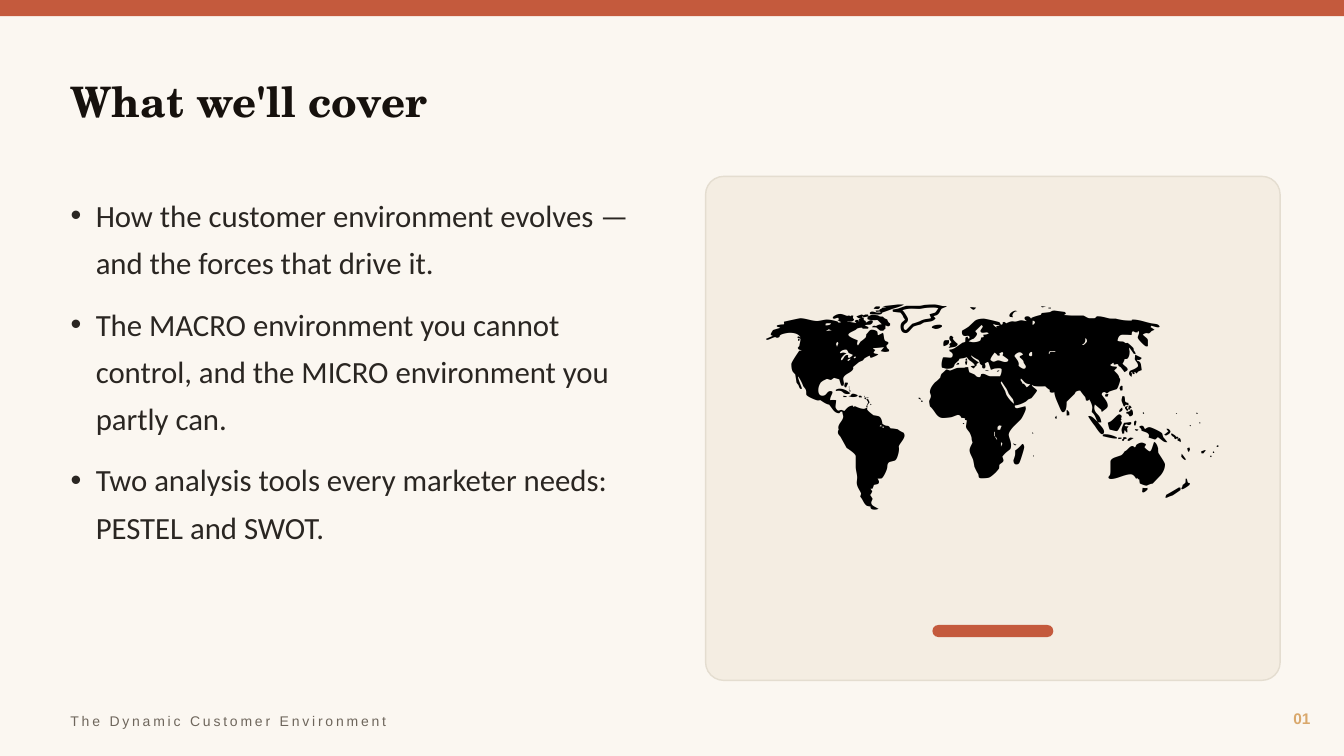
from pptx import Presentation
from pptx.dml.color import RGBColor
from pptx.enum.shapes import MSO_SHAPE
from pptx.enum.text import MSO_ANCHOR, MSO_AUTO_SIZE, PP_ALIGN
from pptx.util import Inches, Pt

RECT, ROUNDED = MSO_SHAPE.RECTANGLE, MSO_SHAPE.ROUNDED_RECTANGLE
TOP, MIDDLE = MSO_ANCHOR.TOP, MSO_ANCHOR.MIDDLE
LEFT, CENTER, RIGHT = PP_ALIGN.LEFT, PP_ALIGN.CENTER, PP_ALIGN.RIGHT
NO_FIT = MSO_AUTO_SIZE.NONE

CREAM = RGBColor(0xFB, 0xF7, 0xF1)
SAND = RGBColor(0xF4, 0xED, 0xE2)
SAND_EDGE = RGBColor(0xE4, 0xDD, 0xD0)
TERRACOTTA = RGBColor(0xC4, 0x5A, 0x3D)
OCHRE = RGBColor(0xD9, 0xA8, 0x6C)
INK = RGBColor(0x16, 0x11, 0x0D)
CHARCOAL = RGBColor(0x2A, 0x26, 0x22)
TAUPE = RGBColor(0x6E, 0x66, 0x5C)
BLACK = RGBColor(0, 0, 0)

HEADING_FONT, BODY_FONT, LABEL_FONT = "TeX Gyre Schola", "Calibri", "Arial"

# The grid has square cells, ten to the inch.
CELL = Inches(0.1)
COLUMNS, ROWS = 133.33, 75
MARGIN = 6
PANEL_LEFT, PANEL_TOP, PANEL_WIDTH, PANEL_HEIGHT = 70, 17.5, 57, 50
ACCENT_WIDTH, ACCENT_HEIGHT = 12, 1.2

TOPICS = [
    "How the customer environment evolves — and the forces that drive it.",
    "The MACRO environment you cannot control, and the MICRO environment you partly can.",
    "Two analysis tools every marketer needs: PESTEL and SWOT.",
]


def cells(*counts):
    """Turn counts of grid cells into lengths."""
    return [round(count * CELL) for count in counts]


def place(placeholder, *area):
    """Move a placeholder to left, top, width and height in cells."""
    (placeholder.left, placeholder.top,
     placeholder.width, placeholder.height) = cells(*area)
    return placeholder


def write(holder, *texts, font, size, color, bold=False, align=LEFT,
          anchor=MIDDLE, spacing=0, bulleted=False):
    """Fill a text holder with one paragraph per text; spacing is in points."""
    frame = holder.text_frame
    frame.word_wrap = True
    frame.auto_size = NO_FIT
    frame.vertical_anchor = anchor
    for index, text in enumerate(texts):
        paragraph = frame.add_paragraph() if index else frame.paragraphs[0]
        paragraph.alignment = align
        paragraph.space_before = Pt(0)
        if bulleted:
            indent = Inches(0.25)
            properties = paragraph._p.get_or_add_pPr()
            properties.set("marL", str(indent))
            properties.set("indent", str(-indent))
            paragraph.line_spacing = 1.28
            paragraph.space_after = Pt(10)
        run = paragraph.add_run()
        run.text = text
        run.font.name = font
        run.font.size = Pt(size)
        run.font.bold = bold
        run.font.color.rgb = color
        if spacing:
            run._r.get_or_add_rPr().set("spc", str(spacing * 100))


def add_label(slide, area, text, **text_format):
    write(slide.shapes.add_textbox(*cells(*area)), text, **text_format)


def add_block(slide, preset, area, fill, edge=None, rounding=None):
    block = slide.shapes.add_shape(preset, *cells(*area))
    block.shadow.inherit = False
    block.fill.solid()
    block.fill.fore_color.rgb = fill
    if edge is None:
        block.line.fill.background()
    else:
        block.line.color.rgb = edge
        block.line.width = Pt(1)
    if rounding is not None:
        block.adjustments[0] = rounding


def add_map_panel(slide):
    add_block(slide, ROUNDED,
              (PANEL_LEFT, PANEL_TOP, PANEL_WIDTH, PANEL_HEIGHT),
              SAND, edge=SAND_EDGE, rounding=0.036)
    add_label(slide, (PANEL_LEFT, PANEL_TOP, PANEL_WIDTH, PANEL_HEIGHT - 9),
              "🗺️", font=BODY_FONT, size=150, color=BLACK, align=CENTER)
    accent_left = PANEL_LEFT + (PANEL_WIDTH - ACCENT_WIDTH) / 2
    add_block(slide, ROUNDED, (accent_left, 62, ACCENT_WIDTH, ACCENT_HEIGHT),
              TERRACOTTA, rounding=0.5)


def main():
    deck = Presentation()
    deck.slide_width, deck.slide_height = cells(COLUMNS, ROWS)
    slide = deck.slides.add_slide(deck.slide_layouts[1])
    slide.background.fill.solid()
    slide.background.fill.fore_color.rgb = CREAM

    add_block(slide, RECT, (0, 0, COLUMNS, 1.6), TERRACOTTA)
    write(place(slide.shapes.title, MARGIN, 5, 121, 10), "What we'll cover",
          font=HEADING_FONT, size=30, color=INK, bold=True)
    write(place(slide.placeholders[1], MARGIN, 18, 60, 50), *TOPICS,
          font=BODY_FONT, size=22, color=CHARCOAL, anchor=TOP, bulleted=True)
    add_map_panel(slide)
    add_label(slide, (122, 69.5, 9, 3.5), "01", font=LABEL_FONT, size=11,
              color=OCHRE, bold=True, align=RIGHT)
    add_label(slide, (MARGIN, 70, 80, 3), "The Dynamic Customer Environment",
              font=LABEL_FONT, size=10, color=TAUPE, spacing=2)
    deck.save("out.pptx")


if __name__ == "__main__":
    main()
